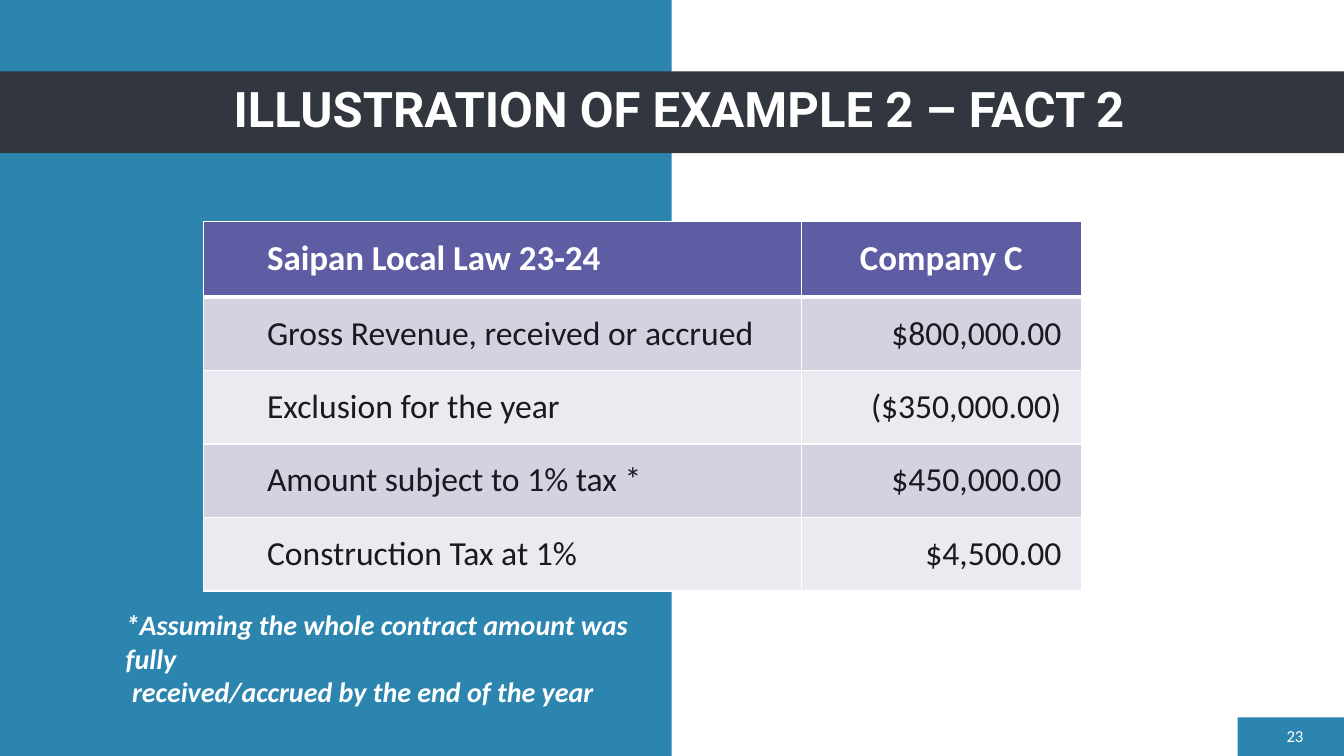
from lxml.etree import SubElement
from pptx import Presentation
from pptx.dml.color import RGBColor
from pptx.enum.shapes import MSO_SHAPE
from pptx.enum.text import MSO_ANCHOR, MSO_AUTO_SIZE, PP_ALIGN
from pptx.oxml.ns import qn
from pptx.util import Cm, Pt

COLORS = {
    "blue": "2C85AE",
    "charcoal": "32363F",
    "white": "FFFFFF",
    "purple": "5E5CA2",
    "lavender": "D2D2E0",
    "pale": "EAEAF0",
    "ink": "181A1F",
}

FORMATS = {
    "title": {"name": "Roboto", "size": Pt(35), "bold": True},
    "number": {"name": "Calibri", "size": Pt(12)},
    "header": {"name": "Calibri", "size": Pt(25), "bold": True},
    "body": {"name": "Calibri", "size": Pt(24), "bold": False},
    "note": {"name": "Calibri", "size": Pt(20), "bold": True, "italic": True},
}

TAX_ROWS = [
    ("Saipan Local Law 23-24", "Company C"),
    ("Gross Revenue, received or accrued", "$800,000.00"),
    ("Exclusion for the year", "($350,000.00)"),
    ("Amount subject to 1% tax *", "$450,000.00"),
    ("Construction Tax at 1%", "$4,500.00"),
]

NOTE_LINES = [
    "*Assuming the whole contract amount was fully",
    " received/accrued by the end of the year",
]


def color(name):
    return RGBColor.from_string(COLORS[name])


def set_attributes(target, values):
    for key, value in values.items():
        setattr(target, key, value)


def write_paragraph(paragraph, text, style, text_color="white", **layout):
    set_attributes(paragraph, layout)
    run = paragraph.add_run()
    run.text = text
    set_attributes(run.font, FORMATS[style])
    run.font.color.rgb = color(text_color)


def add_block(slide, fill, left, top, width, height):
    shape = slide.shapes.add_shape(
        MSO_SHAPE.RECTANGLE, Cm(left), Cm(top), Cm(width), Cm(height))
    shape.shadow.inherit = False
    shape.fill.solid()
    shape.fill.fore_color.rgb = color(fill)
    shape.line.fill.background()


def add_text(slide, lines, style, box, frame_values, **layout):
    shape = slide.shapes.add_textbox(*[Cm(length) for length in box])
    frame = shape.text_frame
    set_attributes(frame, {"word_wrap": True, **frame_values})
    for index, line in enumerate(lines):
        paragraph = frame.add_paragraph() if index else frame.paragraphs[0]
        write_paragraph(paragraph, line, style, **layout)


def set_borders(cell, bottom_width):
    properties = cell._tc.get_or_add_tcPr()
    widths = {"lnL": 1, "lnR": 1, "lnT": 1, "lnB": bottom_width}
    for index, (side, width) in enumerate(widths.items()):
        line = SubElement(properties, qn(f"a:{side}"), w=str(Pt(width)))
        fill = SubElement(line, qn("a:solidFill"))
        SubElement(fill, qn("a:srgbClr"), val=COLORS["white"])
        properties.insert(index, line)


def fill_cell(cell, text, row, column):
    set_attributes(cell, {
        "vertical_anchor": MSO_ANCHOR.MIDDLE,
        "margin_left": Cm(0.5 if column else 1.6),
        "margin_top": Cm(0.5),
        "margin_right": Cm(0.5),
        "margin_bottom": Cm(0.25),
    })
    alignment = PP_ALIGN.LEFT
    if column:
        alignment = PP_ALIGN.RIGHT if row else PP_ALIGN.CENTER
    write_paragraph(
        cell.text_frame.paragraphs[0], text,
        "body" if row else "header", "ink" if row else "white",
        alignment=alignment, line_spacing=Pt(21.8))
    band = "lavender" if row % 2 else "pale"
    cell.fill.solid()
    cell.fill.fore_color.rgb = color(band if row else "purple")
    set_borders(cell, 1 if row else 3)


def add_tax_table(slide):
    widths = [15.06, 7.06]
    heights = [1.9] + [1.85] * (len(TAX_ROWS) - 1)
    table = slide.shapes.add_table(
        len(heights), len(widths), Cm(5.13), Cm(5.59),
        Cm(sum(widths)), Cm(sum(heights))).table
    for column, width in zip(table.columns, widths):
        column.width = Cm(width)
    for row, height in zip(table.rows, heights):
        row.height = Cm(height)
    for row, texts in enumerate(TAX_ROWS):
        for column, text in enumerate(texts):
            fill_cell(table.cell(row, column), text, row, column)


def main():
    presentation = Presentation()
    presentation.slide_width = Cm(33.87)
    presentation.slide_height = Cm(19.05)
    slide = presentation.slides.add_slide(presentation.slide_layouts[6])
    middle = {"vertical_anchor": MSO_ANCHOR.MIDDLE}

    add_block(slide, "blue", 31.19, 18.08, 2.68, 0.97)
    add_block(slide, "blue", 0, 0, 16.93, 19.05)
    add_block(slide, "charcoal", 0, 1.8, 33.87, 2.06)
    add_text(slide, ["ILLUSTRATION OF EXAMPLE 2 – FACT 2"], "title",
             (1.55, 1.78, 31.14, 2.06), middle,
             alignment=PP_ALIGN.CENTER, line_spacing=0.9)
    add_text(slide, ["23"], "number", (25.48, 18.03, 7.62, 1.02), middle,
             alignment=PP_ALIGN.RIGHT, space_after=Pt(6))
    add_tax_table(slide)
    add_text(slide, NOTE_LINES, "note", (2.92, 15.19, 14.2, 1.96),
             {"auto_size": MSO_AUTO_SIZE.SHAPE_TO_FIT_TEXT})

    presentation.save("out.pptx")


if __name__ == "__main__":
    main()
